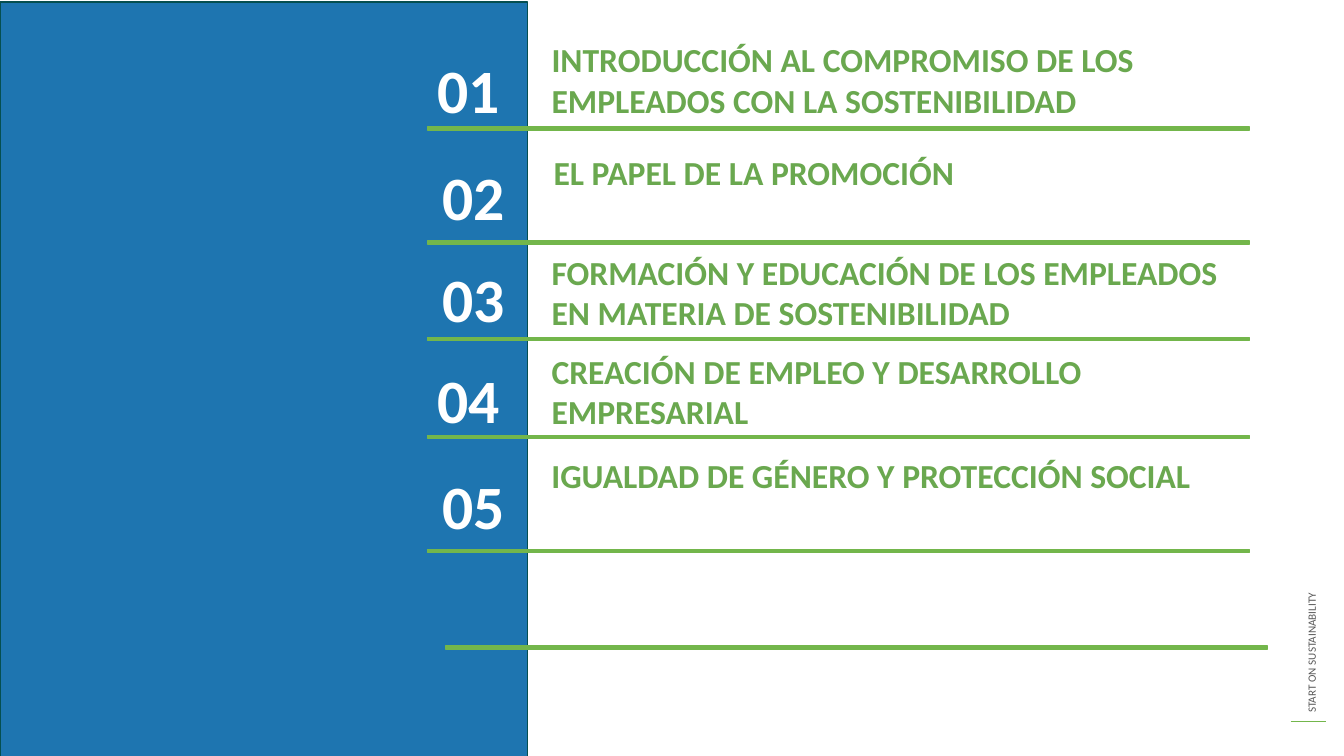
from dataclasses import dataclass
from lxml.etree import SubElement
from pptx import Presentation
from pptx.dml.color import RGBColor
from pptx.enum.shapes import MSO_CONNECTOR, MSO_SHAPE
from pptx.enum.text import MSO_ANCHOR, MSO_AUTO_SIZE, PP_ALIGN
from pptx.oxml.ns import qn
from pptx.util import Inches, Pt

TOPICS = [
    ("INTRODUCCIÓN AL COMPROMISO DE LOS EMPLEADOS CON LA SOSTENIBILIDAD", 5.37, 0.34, 4.24, 0.25),
    ("EL PAPEL DE LA PROMOCIÓN", 5.39, 1.46, 4.29, 1.31),
    ("FORMACIÓN Y EDUCACIÓN DE LOS EMPLEADOS EN MATERIA DE SOSTENIBILIDAD", 5.37, 2.45, 4.29, 2.32),
    ("CREACIÓN DE EMPLEO Y DESARROLLO EMPRESARIAL", 5.37, 3.43, 4.24, 3.32),
    ("IGUALDAD DE GÉNERO Y PROTECCIÓN SOCIAL", 5.37, 4.46, 4.29, 4.37),
]
RULES = [(4.24, 1.26), (4.24, 2.39), (4.24, 3.35), (4.24, 4.32), (4.24, 5.45), (4.42, 6.41)]
MOTTO = "START ON SUSTAINABILITY"


@dataclass(frozen=True)
class Theme:
    font: str = "Calibri"
    panel: str = "1E75B0"
    edge: str = "054F50"
    rule: str = "73B64B"
    topic: str = "6AA84F"
    number: str = "FFFFFF"
    motto: str = "595959"
    topic_size: int = 24
    number_size: int = 44
    motto_size: int = 8


THEME = Theme()


def place(shape, left, top, width, height):
    shape.left, shape.top = Inches(left), Inches(top)
    shape.width, shape.height = Inches(width), Inches(height)


def add_bar(slide, area, fill, edge):
    bar = slide.shapes.add_shape(MSO_SHAPE.RECTANGLE, *map(Inches, area))
    bar.shadow.inherit = False
    bar.fill.solid()
    bar.fill.fore_color.rgb = RGBColor.from_string(fill)
    bar.line.color.rgb = RGBColor.from_string(edge)
    bar.line.width = Pt(1)


def write(box, area, text, size, color, bold=True, spacing=1.0):
    place(box, *area)
    frame = box.text_frame
    frame.text = text
    frame.word_wrap = True
    frame.auto_size = MSO_AUTO_SIZE.NONE
    frame.vertical_anchor = MSO_ANCHOR.TOP
    line = frame.paragraphs[0]
    line.alignment = PP_ALIGN.LEFT
    line.line_spacing = spacing
    line.space_before = Pt(0)
    props = line._p.get_or_add_pPr()
    props.set("marL", "0")
    props.set("indent", "0")
    SubElement(props, qn("a:buNone"))
    font = line.runs[0].font
    font.name, font.size, font.bold = THEME.font, Pt(size), bold
    font.color.rgb = RGBColor.from_string(color)


def add_text(slide):
    return slide.shapes.add_textbox(0, 0, 0, 0)


def add_motto(slide):
    box = add_text(slide)
    write(box, (10.78, 4.82, 4.46, 0.24), MOTTO, THEME.motto_size, THEME.motto, bold=False)
    box.rotation = 270
    dash = slide.shapes.add_connector(
        MSO_CONNECTOR.STRAIGHT, Inches(12.8), Inches(7.16), Inches(13.15), Inches(7.16))
    dash.line.color.rgb = RGBColor.from_string(THEME.rule)
    dash.line.width = Pt(1)
    SubElement(dash._element.spPr, qn("a:effectLst"))


def main():
    deck = Presentation()
    deck.slide_width, deck.slide_height = Inches(13.33), Inches(7.5)
    slide = deck.slides.add_slide(deck.slide_layouts.get_by_name("Comparison"))
    title = slide.shapes.title
    title._element.getparent().remove(title._element)
    bodies = list(slide.placeholders)

    add_motto(slide)
    add_bar(slide, (0, 0.02, 5.23, 7.5), THEME.panel, THEME.edge)
    for left, top in RULES:
        add_bar(slide, (left, top, 8.15, 0.03), THEME.rule, THEME.rule)
    for count, (text, left, top, num_left, num_top) in enumerate(TOPICS, 1):
        box = bodies.pop(0) if bodies else add_text(slide)
        write(box, (left, top, 7.18, 0.56), text, THEME.topic_size, THEME.topic)
        write(add_text(slide), (num_left, num_top, 1.35, 1.05), f"{count:02}",
              THEME.number_size, THEME.number, spacing=1.3)
    deck.save("out.pptx")


if __name__ == "__main__":
    main()
